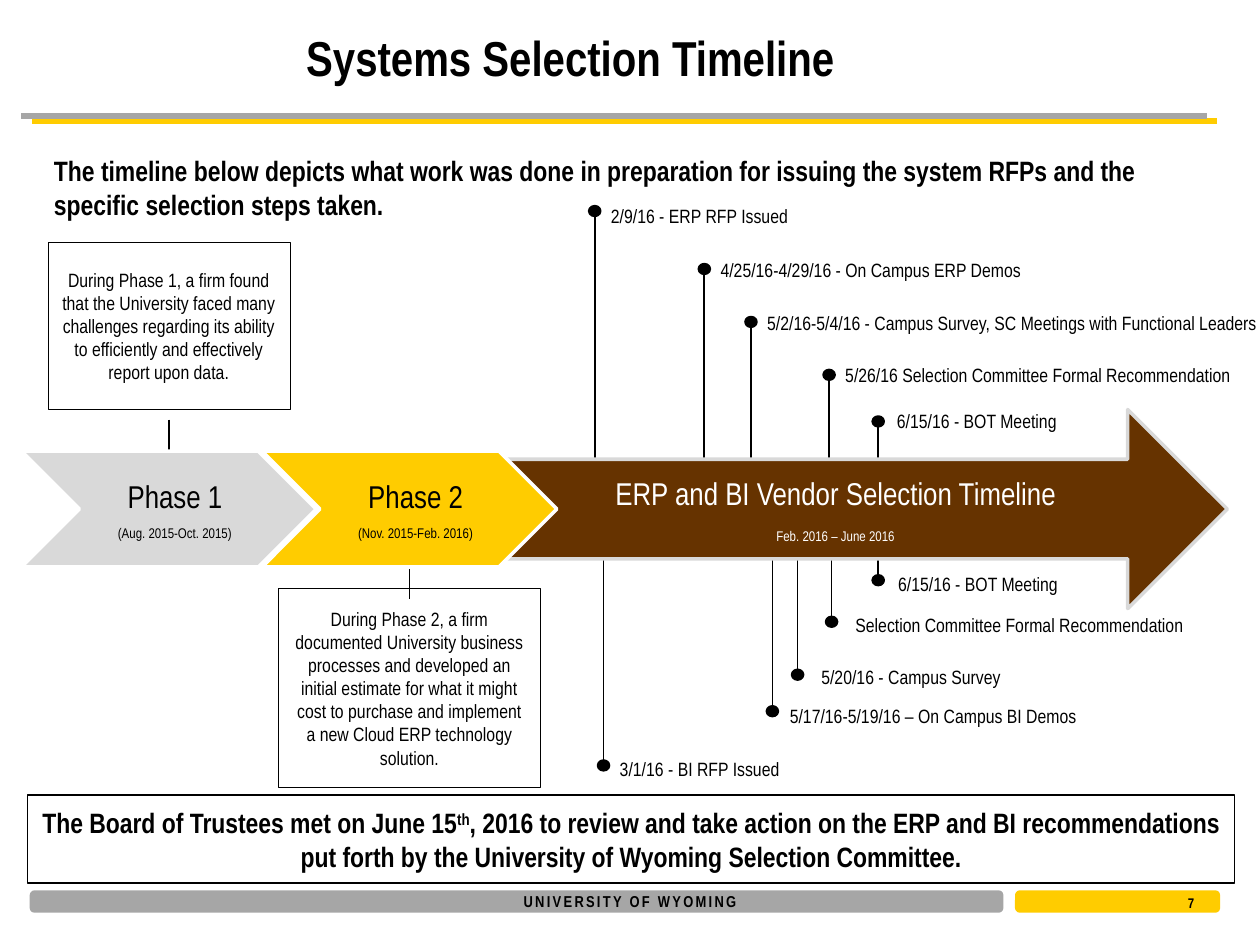
from pptx import Presentation
from pptx.dml.color import RGBColor
from pptx.enum.shapes import MSO_CONNECTOR as Link, MSO_SHAPE as Form
from pptx.enum.text import MSO_ANCHOR as Anchor, PP_ALIGN as Align
from pptx.oxml.ns import qn
from pptx.util import Pt
from lxml import etree

PX = 9144  # one px is a hundredth of an inch
WIDE, HIGH = 1000, 750
FONT = "Arial Narrow"
BLACK, WHITE, GREY, PALE = "000000", "FFFFFF", "A6A6A6", "D9D9D9"
GOLD, BROWN = "FFCC00", "663300"

# dot x, dot y, label x, label y, label
ERP = [
    (472, 168, 475, 157, "2/9/16 - ERP RFP Issued"),
    (559, 214, 562, 200, "4/25/16-4/29/16 - On Campus ERP Demos"),
    (596, 256, 599, 242,
     "5/2/16-5/4/16 - Campus Survey, SC Meetings with Functional Leaders"),
    (658, 298, 661, 283, "5/26/16 Selection Committee Formal Recommendation"),
    (697, 335, 702, 320, "6/15/16 - BOT Meeting"),
]
BI = [
    (479, 608, 482, 596, "3/1/16 - BI RFP Issued"),
    (613, 565, 617, 554, "5/17/16-5/19/16 – On Campus BI Demos"),
    (633, 536, 642, 523, "5/20/16 - Campus Survey"),
    (660, 494, 669, 482, "Selection Committee Formal Recommendation"),
    (697, 461, 703, 449, "6/15/16 - BOT Meeting"),
]


def rgb(code):
    return RGBColor.from_string(code)


def emu(*sizes):
    return [size * PX for size in sizes]


def style(para, size, color=BLACK, bold=False, align=Align.LEFT):
    para.alignment = align
    font = para.font
    font.name, font.size, font.bold = FONT, Pt(size), bold
    font.color.rgb = rgb(color)


def pad(frame, left=10, top=5, right=10, low=5):
    frame.margin_left, frame.margin_top = emu(left, top)
    frame.margin_right, frame.margin_bottom = emu(right, low)


def line(slide, x1, y1, x2, y2, color=BLACK, width=1):
    link = slide.shapes.add_connector(Link.STRAIGHT, *emu(x1, y1, x2, y2))
    link.line.color.rgb = rgb(color)
    link.line.width = Pt(width)
    etree.SubElement(link._element.spPr, qn("a:effectLst"))


def shape(slide, form, box, fill, edge, width):
    item = slide.shapes.add_shape(form, *emu(*box))
    item.shadow.inherit = False
    if fill:
        item.fill.solid()
        item.fill.fore_color.rgb = rgb(fill)
    else:
        item.fill.background()
    item.line.color.rgb = rgb(edge)
    item.line.width = Pt(width)
    frame = item.text_frame
    frame.word_wrap = True
    frame.vertical_anchor = Anchor.MIDDLE
    return item


def text(slide, box, words, size, bold=False, align=Align.LEFT):
    frame = slide.shapes.add_textbox(*emu(*box)).text_frame
    frame.word_wrap = True
    para = frame.paragraphs[0]
    run = para.add_run()
    run.text = words
    style(para, size, bold=bold, align=align)
    return frame, run


def header(slide, box):
    left, top, wide, high = box
    line(slide, left + 8, top + 96, left + wide + 8, top + 96, GOLD, 3)
    line(slide, left, top + 92, left + wide, top + 92, GREY, 3)
    title = slide.shapes.title
    title.left, title.top, title.width, title.height = emu(
        left + 216, top + 15, 750, 60)
    frame = title.text_frame
    frame.text = "Systems Selection Timeline"
    frame.vertical_anchor = Anchor.MIDDLE
    style(frame.paragraphs[0], 28, bold=True)


def footer(slide, box):
    left, top, wide, high = box
    gap = 12
    tab = 160
    bar = wide - gap - tab
    for x, width, color in ((left, bar, GREY), (left + bar + gap, tab, GOLD)):
        shape(slide, Form.ROUNDED_RECTANGLE, (x, top, width, high),
              color, color, 2)
    frame, run = text(slide, (WIDE // 2 - 100, top - 5, 200, 25),
                      "UNIVERSITY OF WYOMING", 9, True, Align.CENTER)
    frame.vertical_anchor = Anchor.MIDDLE
    run._r.get_or_add_rPr().set("spc", "130")
    text(slide, (left + wide - 34, top - 3, 40, 20), "7", 8, True)


def heads(item, name, dates, color, gap):
    frame = item.text_frame
    frame.text = name
    first, last = frame.paragraphs[0], frame.add_paragraph()
    last.text = dates
    style(first, 18, color, align=Align.CENTER)
    style(last, 8, color, align=Align.CENTER)
    first.space_after = Pt(gap)


def phase(slide, box, name, dates, fill):
    item = shape(slide, Form.CHEVRON, box, fill, WHITE, 2)
    item.adjustments[0] = 0.5
    pad(item.text_frame, left=10, right=0)
    heads(item, name, dates, BLACK, 6)


def note(slide, box, words):
    frame = shape(slide, Form.RECTANGLE, box, None, BLACK, 0.25).text_frame
    frame.text = words
    style(frame.paragraphs[0], 11, align=Align.CENTER)


def events(slide, marks, edge):
    for x, y, left, top, words in marks:
        line(slide, x, y, x, edge)
        shape(slide, Form.OVAL, (x - 4, y - 4, 8, 7), BLACK, BLACK, 2)
        frame, _ = text(slide, (left, top, WIDE - left, 29), words, 11)
        pad(frame, right=0)


def track(slide, box):
    left, top, wide, high = box
    # Events reach the shaft, which is the middle half of the arrow
    events(slide, ERP, top + high // 4)
    events(slide, BI, top + high - high // 4)
    # Links from the phases to their notes
    line(slide, 134, 333, 134, 367)
    line(slide, 325, 433, 325, 475)
    arrow = shape(slide, Form.RIGHT_ARROW, (left + 375, top, wide - 375, high),
                  BROWN, PALE, 2)
    heads(arrow, "ERP and BI Vendor Selection Timeline",
          "Feb. 2016 – June 2016", WHITE, 9)
    steps = [("Phase 1", "(Aug. 2015-Oct. 2015)", PALE),
             ("Phase 2", "(Nov. 2015-Feb. 2016)", GOLD)]
    for i, step in enumerate(steps):
        phase(slide, (left + 191 * i, top + 33, 234, 92), *step)


def verdict(slide, box):
    frame = shape(slide, Form.RECTANGLE, box, None, BLACK, 0.75).text_frame
    para = frame.paragraphs[0]
    for words, base in (
            ("The Board of Trustees met on June 15", 0),
            ("th", 30000),
            (", 2016 to review and take action on the ERP and BI "
             "recommendations put forth by the University of Wyoming "
             "Selection Committee.", 0)):
        run = para.add_run()
        run.text = words
        if base:
            run._r.get_or_add_rPr().set("baseline", str(base))
    style(para, 16, bold=True, align=Align.CENTER)


def main():
    deck = Presentation()
    deck.slide_width, deck.slide_height = emu(WIDE, HIGH)
    slide = deck.slides.add_slide(deck.slide_layouts[5])
    header(slide, (17, 0, 941, 96))
    footer(slide, (25, 708, 942, 15))
    text(slide, (33, 117, 909, 64),
         "The timeline below depicts what work was done in preparation for "
         "issuing the system RFPs and the specific selection steps taken.",
         16, True)
    track(slide, (17, 325, 957, 158))
    note(slide, (38, 192, 192, 133),
         "During Phase 1, a firm found that the University faced many "
         "challenges regarding its ability to efficiently and effectively "
         "report upon data.")
    note(slide, (221, 467, 208, 158),
         "During Phase 2, a firm documented University business processes and "
         "developed an initial estimate for what it might cost to purchase "
         "and implement a new Cloud ERP technology solution.")
    verdict(slide, (22, 631, 958, 70))
    deck.save("out.pptx")


if __name__ == "__main__":
    main()
